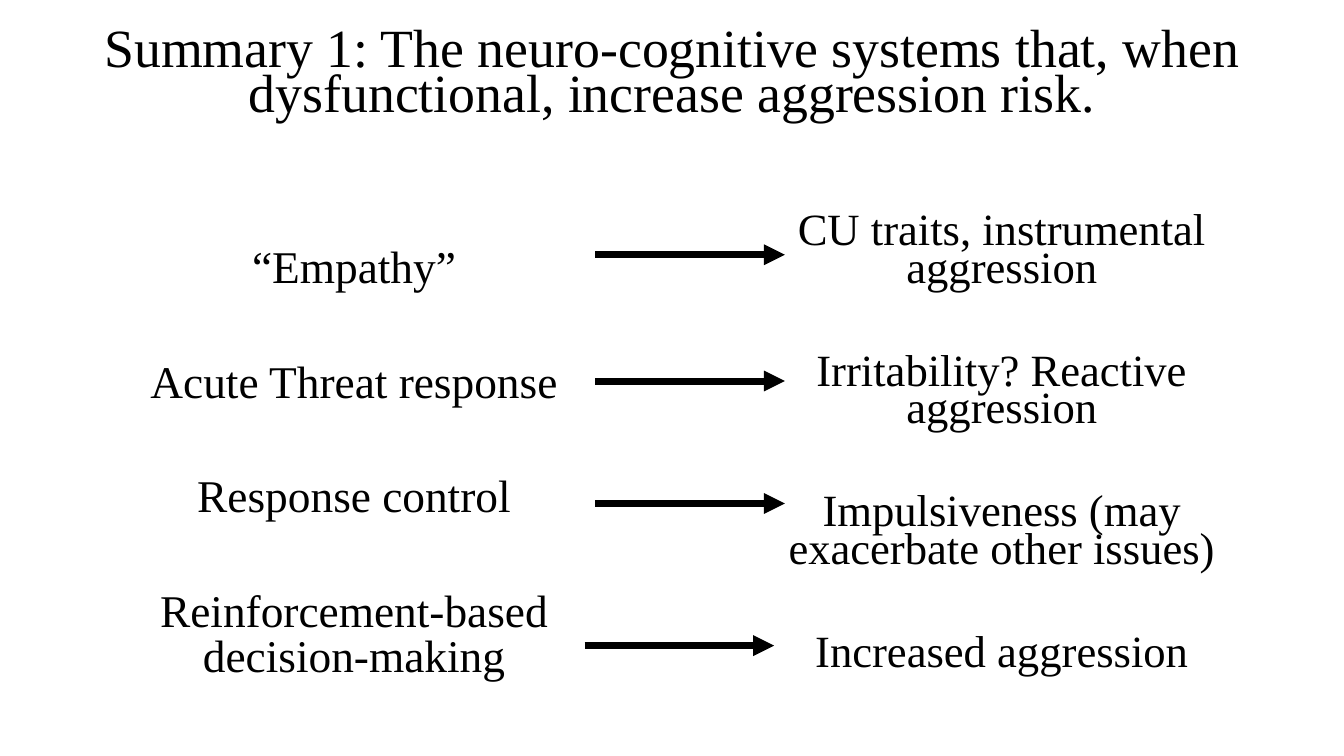
from lxml.etree import SubElement
from pptx import Presentation
from pptx.dml.color import RGBColor
from pptx.enum.shapes import MSO_CONNECTOR
from pptx.enum.text import MSO_ANCHOR, MSO_AUTO_SIZE, PP_ALIGN
from pptx.oxml.ns import qn
from pptx.util import Inches, Pt

WIDTH, HEIGHT = Inches(13.33), Inches(7.5)
BLACK = RGBColor(0, 0, 0)
WHITE = RGBColor(255, 255, 255)
FONT = "Times New Roman"

TITLE = ("Summary 1: The neuro-cognitive systems that, when "
         "dysfunctional, increase aggression risk.")
SYSTEMS = ["“Empathy”", "Acute Threat response", "Response control",
           "Reinforcement-based decision-making"]
OUTCOMES = ["CU traits, instrumental aggression", "Irritability? Reactive aggression",
            "Impulsiveness (may exacerbate other issues)", "Increased aggression"]
ARROW_LENGTH = 0.141
ARROW_STARTS = [(0.443, 0.337), (0.443, 0.504), (0.443, 0.666), (0.435, 0.854)]


def across(share):
    """Return a share of the slide width."""
    return round(WIDTH * share)


def down(share):
    """Return a share of the slide height."""
    return round(HEIGHT * share)


def fill_placeholder(box, area, lines, size, line_spacing, gap=0):
    """Place a placeholder and fill it with centred, unbulleted paragraphs."""
    left, top, width, height = area
    box.left, box.top = across(left), down(top)
    box.width, box.height = across(width), down(height)
    frame = box.text_frame
    frame.word_wrap = True
    frame.auto_size = MSO_AUTO_SIZE.NONE
    frame.vertical_anchor = MSO_ANCHOR.TOP
    frame.margin_top = Inches(0.05)
    for index, line in enumerate(lines):
        para = frame.add_paragraph() if index else frame.paragraphs[0]
        properties = para._p.get_or_add_pPr()
        properties.set("marL", "0")
        properties.set("indent", "0")
        SubElement(properties, qn("a:buNone"))
        para.alignment = PP_ALIGN.CENTER
        para.line_spacing = line_spacing
        para.space_before = Pt(gap if index else 0)
        para.space_after = Pt(0)
        span = para.add_run()
        span.text = line
        span.font.name = FONT
        span.font.size = Pt(size)
        span.font.color.rgb = BLACK


def add_arrow(page, left, top):
    """Draw a thick horizontal arrow pointing right."""
    arrow = page.shapes.add_connector(
        MSO_CONNECTOR.STRAIGHT, across(left), down(top),
        across(left + ARROW_LENGTH), down(top))
    arrow.line.color.rgb = BLACK
    arrow.line.width = Pt(5)
    SubElement(arrow.line._get_or_add_ln(), qn("a:tailEnd"), type="triangle")
    SubElement(arrow._element.spPr, qn("a:effectLst"))


def main():
    """Build the summary slide and save it."""
    deck = Presentation()
    deck.slide_width, deck.slide_height = WIDTH, HEIGHT
    page = deck.slides.add_slide(deck.slide_layouts.get_by_name("Two Content"))
    page.background.fill.solid()
    page.background.fill.fore_color.rgb = WHITE
    title, systems, outcomes = list(page.placeholders)[:3]
    fill_placeholder(title, (0, 0.035, 1, 0.175), [TITLE], 38.4, 0.7)
    fill_placeholder(systems, (0.056, 0.321, 0.415, 0.582), SYSTEMS, 32.4, 0.82, 50.1)
    fill_placeholder(outcomes, (0.538, 0.279, 0.415, 0.667), OUTCOMES, 31.9, 0.7, 46.7)
    for left, top in ARROW_STARTS:
        add_arrow(page, left, top)
    deck.save("out.pptx")


if __name__ == "__main__":
    main()
